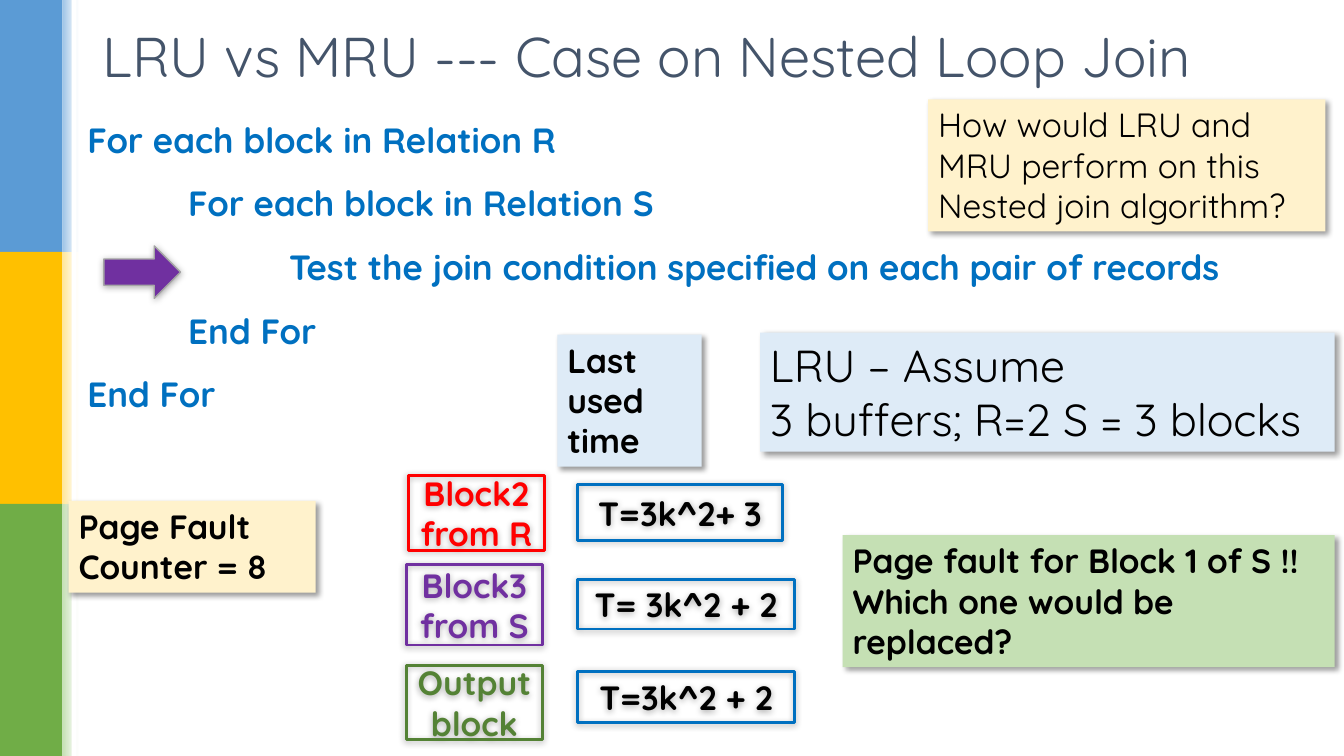
from dataclasses import dataclass

from lxml.etree import SubElement
from pptx import Presentation
from pptx.dml.color import RGBColor
from pptx.enum.shapes import MSO_SHAPE
from pptx.enum.text import MSO_ANCHOR, PP_ALIGN
from pptx.oxml.ns import qn
from pptx.util import Pt


@dataclass(frozen=True)
class Theme:
    font: str = "Quicksand"
    head: int = 40
    large: int = 32
    code: int = 25
    text: int = 24
    slate: str = "44546A"
    black: str = "000000"
    white: str = "FFFFFF"
    blue: str = "0070C0"
    red: str = "FF0000"
    purple: str = "7030A0"
    green: str = "548235"
    gray: str = "A5A5A5"
    cream: str = "FFF2CC"
    sky: str = "DEEBF7"
    mint: str = "C5E0B4"
    bands: tuple = (("5B9BD5", "9DC3E6"), ("FFC000", "FFE699"), ("70AD47", "C5E0B4"))
    # Shadows: opacity in percent, blur and distance in points, angle in degrees
    drop: tuple = (40, 4, 3, 45)
    glow: tuple = (32, 5, 1, 90)


THEME = Theme()


def color(code):
    return RGBColor.from_string(code)


def shade(shape, style):
    """Give the shape an outer shadow."""
    alpha, blur, dist, angle = style
    effects = shape._element.spPr.find(qn("a:effectLst"))
    outer = SubElement(effects, qn("a:outerShdw"), blurRad=str(Pt(blur)),
                       dist=str(Pt(dist)), dir=str(angle * 60000),
                       algn="ctr", rotWithShape="0")
    tint = SubElement(outer, qn("a:srgbClr"), val=THEME.black)
    SubElement(tint, qn("a:alpha"), val=str(alpha * 1000))


def draw(slide, box, fill=None, line=None, width=2, shadow=None, kind=MSO_SHAPE.RECTANGLE):
    shape = slide.shapes.add_shape(kind, *map(Pt, box))
    if fill:
        shape.fill.solid()
        shape.fill.fore_color.rgb = color(fill)
    else:
        shape.fill.background()
    if line:
        shape.line.color.rgb = color(line)
        shape.line.width = Pt(width)
    else:
        shape.line.fill.background()
    shape.shadow.inherit = False
    if shadow:
        shade(shape, shadow)
    return shape


def write(frame, lines, size, tint, bold=False, align=PP_ALIGN.LEFT, anchor=MSO_ANCHOR.TOP):
    frame.word_wrap = True
    frame.vertical_anchor = anchor
    for i, line in enumerate(lines):
        para = frame.add_paragraph() if i else frame.paragraphs[0]
        para.alignment = align
        run = para.add_run()
        run.text = line
        run.font.name = THEME.font
        run.font.size = Pt(size)
        run.font.bold = bold
        run.font.color.rgb = color(tint)


def side(slide, box):
    """Stack the colour bands, each with a strip that fades to white."""
    left, top, width, height = box
    step = height / len(THEME.bands)
    solid = 44.64
    for i, (dark, light) in enumerate(THEME.bands):
        y = top + i * step
        draw(slide, (left, y, solid, step), dark)
        strip = draw(slide, (left + solid, y, width - solid, step), light)
        strip.fill.gradient()
        strip.fill.gradient_angle = 0
        for stop, tint in zip(strip.fill.gradient_stops, (light, THEME.white)):
            stop.color.rgb = color(tint)
    draw(slide, (left + width - 5, top, 3.6, height), THEME.white)


def title(slide, box, text):
    shape = slide.shapes.title
    shape.left, shape.top, shape.width, shape.height = map(Pt, box)
    write(shape.text_frame, [text], THEME.head, THEME.slate, anchor=MSO_ANCHOR.MIDDLE)


def loops(slide, box):
    """Write the nested loop, with an arrow at the current step."""
    left, top, width, height = box
    steps = [
        (0, "For each block in Relation R"),
        (1, "For each block in Relation S"),
        (2, "Test the join condition specified on each pair of records"),
        (1, "End For"),
        (0, "End For"),
    ]
    frame = slide.shapes.add_textbox(*map(Pt, box)).text_frame
    write(frame, [text for _, text in steps], THEME.code, THEME.blue, bold=True)
    for i, (para, (depth, _)) in enumerate(zip(frame.paragraphs, steps)):
        para._p.get_or_add_pPr().set("marL", str(Pt(72 * depth)))
        para.line_spacing = 0.9
        para.space_after = Pt(12)
        if i:
            para.space_before = Pt(6.5)
    draw(slide, (left + 18.8, top + 91.5, 54.7, 37.4), THEME.purple, THEME.gray, 1,
         THEME.glow, MSO_SHAPE.RIGHT_ARROW)


def note(slide, box, fill, lines, size=THEME.text, bold=True, align=PP_ALIGN.LEFT):
    shape = draw(slide, box, fill, shadow=THEME.drop)
    write(shape.text_frame, lines, size, THEME.black, bold, align)


def frames(slide, box):
    """Set out the buffer blocks and the time each was last used."""
    left, top, width, height = box
    note(slide, (left + 108, top, 103, 94.3), THEME.sky, ["Last used time"])
    times = left + 122.4
    rows = [
        ("Block2 from R", THEME.red, 1.4, 100.8, 53.3, "T=3k^2+ 3", 107.3, 146.2, 39.6),
        ("Block3 from S", THEME.purple, 0, 164.2, 57.6, "T= 3k^2 + 2", 175, 154.8, 35.3),
        ("Output block", THEME.green, 0, 236.2, 53.3, "T=3k^2 + 2", 240.5, 154.8, 36.7),
    ]
    for name, tint, dx, dy, tall, time, drop, wide, deep in rows:
        cells = [
            ((left + dx, top + dy, 97.2, tall), name, tint, tint),
            ((times, top + drop, wide, deep), time, THEME.blue, THEME.black),
        ]
        for place, text, edge, ink in cells:
            cell = draw(slide, place, line=edge, shadow=THEME.glow)
            write(cell.text_frame, [text], THEME.text, ink, True,
                  PP_ALIGN.CENTER, MSO_ANCHOR.MIDDLE)


def main():
    deck = Presentation()
    deck.slide_width, deck.slide_height = Pt(960), Pt(540)
    slide = deck.slides.add_slide(deck.slide_layouts[5])
    side(slide, (0, 0, 56.16, 540))
    title(slide, (66.2, 8.6, 828, 62), "LRU vs MRU --- Case on Nested Loop Join")
    note(slide, (663, 71, 283.7, 94.3), THEME.cream,
         ["How would LRU and MRU perform on this Nested join algorithm?"], bold=False)
    loops(slide, (55.4, 84.2, 849.6, 221.8))
    frames(slide, (290.2, 239, 277.2, 289.5))
    note(slide, (49, 357.8, 176.4, 65.5), THEME.cream, ["Page Fault Counter = 8"])
    note(slide, (542.9, 237.6, 410.4, 85), THEME.sky,
         ["LRU – Assume", "3 buffers; R=2 S = 3 blocks"], THEME.large, False,
         PP_ALIGN.JUSTIFY)
    note(slide, (601.9, 382.3, 351.4, 94.3), THEME.mint,
         ["Page fault for Block 1 of S !! Which one would be replaced?"])
    deck.save("out.pptx")


if __name__ == "__main__":
    main()
